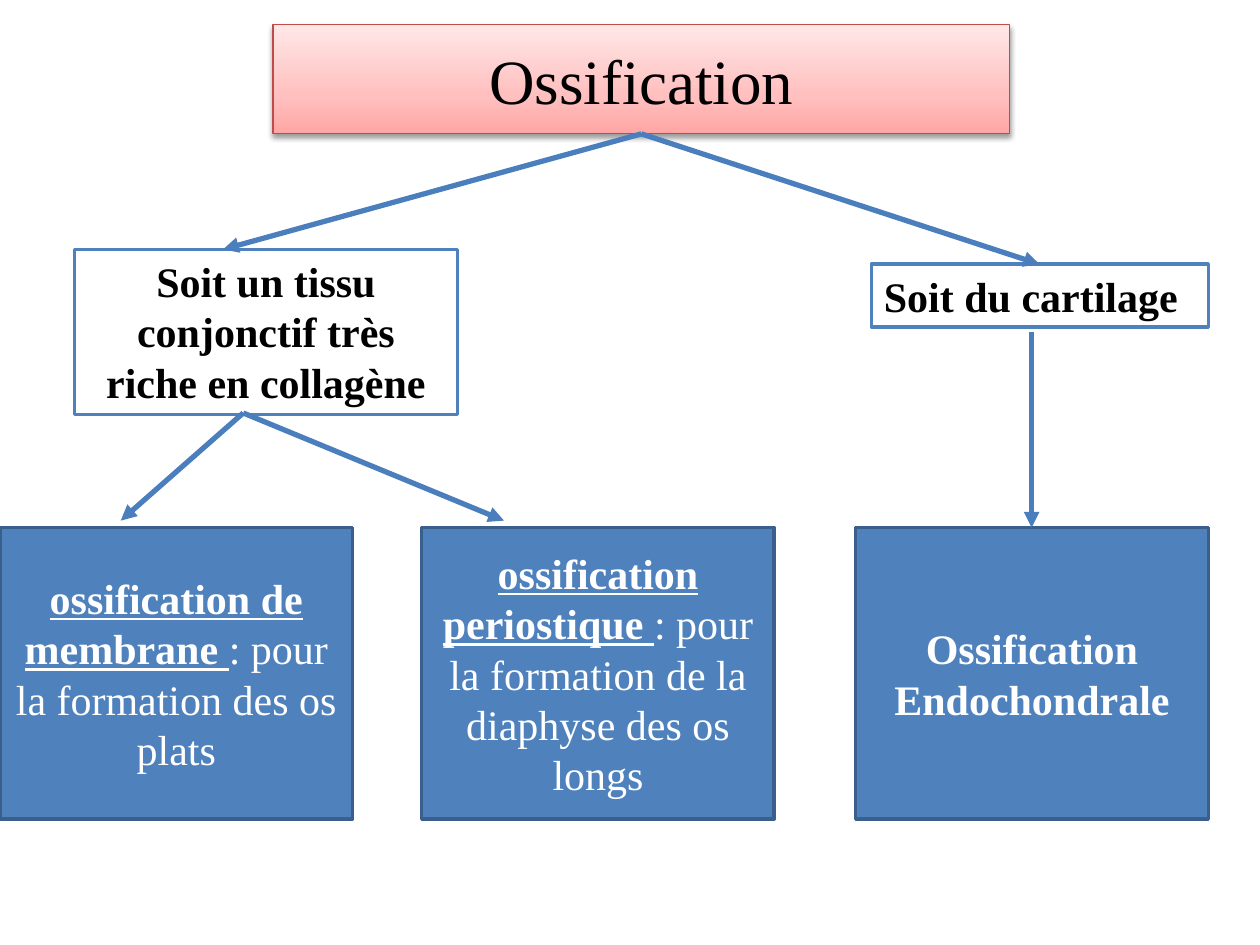
from copy import deepcopy

from lxml.etree import SubElement as Sub
from pptx import Presentation
from pptx.dml.color import RGBColor
from pptx.enum.shapes import MSO_CONNECTOR as Link, MSO_SHAPE as Shape
from pptx.enum.text import MSO_ANCHOR as Anchor, PP_ALIGN as Align
from pptx.oxml.ns import qn
from pptx.util import Pt

BLUE, EDGE, ARROW = "4F81BD", "3A5F8C", "4B7EBC"
WHITE, BLACK, RED = "FFFFFF", "000000", "BF4C48"
GLOW = [(0, "FFA6A5"), (0.35, "FFC0BF"), (1, "FFE7E7")]


def color(code):
    return RGBColor.from_string(code)


def style(item, **form):
    for name, value in form.items():
        setattr(item, name, value)


def write(shape, runs, size, ink, align, anchor):
    frame = shape.text_frame
    style(frame, word_wrap=True, vertical_anchor=anchor)
    para = frame.paragraphs[0]
    para.alignment = align
    for text, form in runs:
        run = para.add_run()
        run.text = text
        style(run.font, name="Times New Roman", size=Pt(size), **form)
        run.font.color.rgb = color(ink)


def block(slide, box, fill, line, width):
    shape = slide.shapes.add_shape(Shape.RECTANGLE, *map(Pt, box))
    shape.shadow.inherit = False
    shape.fill.solid()
    shape.fill.fore_color.rgb = color(fill)
    shape.line.color.rgb = color(line)
    shape.line.width = Pt(width)
    return shape


def title(slide, box, text):
    shape = block(slide, box, WHITE, RED, 0.75)
    shape.fill.gradient()
    shape.fill.gradient_angle = 90
    props = shape._element.spPr
    stops = props.find(qn("a:gradFill")).find(qn("a:gsLst"))
    stops.append(deepcopy(stops[0]))
    for stop, (place, code) in zip(shape.fill.gradient_stops, GLOW):
        stop.position = place
        stop.color.rgb = color(code)
    shade = Sub(props.find(qn("a:effectLst")), qn("a:outerShdw"),
                blurRad=str(Pt(3.1)), dist=str(Pt(1.6)),
                dir="5400000", rotWithShape="0")
    tint = Sub(shade, qn("a:srgbClr"), val=BLACK)
    Sub(tint, qn("a:alpha"), val="38000")
    write(shape, [(text, {})], 36, BLACK, Align.CENTER, Anchor.MIDDLE)


def source(slide, box, text, align):
    shape = block(slide, box, WHITE, BLUE, 2)
    write(shape, [(text, {"bold": True})], 24, BLACK, align, Anchor.TOP)


def result(slide, box, runs):
    shape = block(slide, box, BLUE, EDGE, 2)
    write(shape, runs, 24, WHITE, Align.CENTER, Anchor.MIDDLE)


def arrow(slide, start, end):
    link = slide.shapes.add_connector(Link.STRAIGHT, *map(Pt, start + end))
    link.line.color.rgb = color(ARROW)
    link.line.width = Pt(3)
    Sub(link.line._get_or_add_ln(), qn("a:tailEnd"), type="triangle")
    Sub(link._element.spPr, qn("a:effectLst"))


def main():
    deck = Presentation()
    style(deck, slide_width=Pt(720), slide_height=Pt(540))
    slide = deck.slides.add_slide(deck.slide_layouts[6])
    title(slide, (156, 14, 421, 62.5), "Ossification")

    strong, key = {"bold": True}, {"bold": True, "underline": True}
    results = [
        (0, [("ossification de membrane ", key),
             (": pour la formation des os plats", {})]),
        (241, [("ossification periostique ", key),
               (": pour la formation de la diaphyse des os longs", {})]),
        (489, [("Ossification Endochondrale", strong)]),
    ]
    for left, runs in results:
        result(slide, (left, 301.5, 201.5, 166.5), runs)

    source(slide, (42.5, 142.5, 219, 94.5),
           "Soit un tissu conjonctif très riche en collagène", Align.CENTER)
    source(slide, (498, 151, 192.5, 36), "Soit du cartilage", Align.LEFT)

    top, fork = (366.5, 76.5), (139, 236)
    links = [
        (top, (127.5, 142.5)),
        (top, (594, 151)),
        (fork, (69, 297.5)),
        (fork, (288, 297.5)),
        ((589.5, 190), (589.5, 301.5)),
    ]
    for start, end in links:
        arrow(slide, start, end)
    deck.save("out.pptx")


if __name__ == "__main__":
    main()
